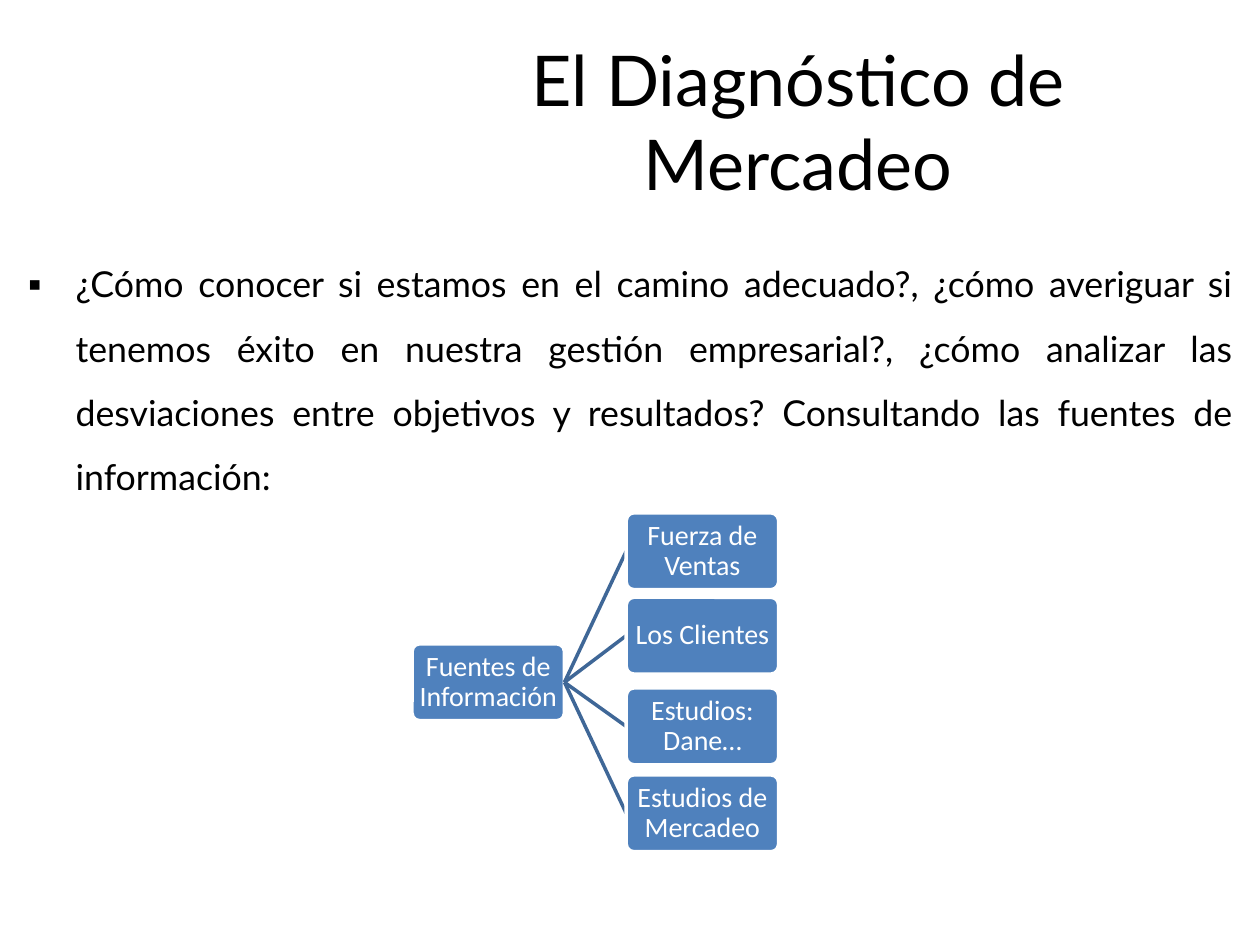
"""Build the market diagnosis slide with its tree of information sources."""
import pptx
import pptx.dml.color
import pptx.enum.shapes
import pptx.enum.text
import pptx.util
from lxml import etree
from pptx.oxml.ns import qn

Inches = pptx.util.Inches
Pt = pptx.util.Pt
PP_ALIGN = pptx.enum.text.PP_ALIGN

HEADING = "El Diagnóstico de Mercadeo"
QUESTION = (
    "¿Cómo conocer si estamos en el camino adecuado?, ¿cómo averiguar si "
    "tenemos éxito en nuestra gestión empresarial?, ¿cómo analizar las "
    "desviaciones entre objetivos y resultados? Consultando las fuentes de "
    "información:"
)
ROOT = ("Fuentes de Información", 3.27, 5.11)
SOURCES = [
    ("Fuerza de Ventas", 4.07),
    ("Los Clientes", 4.74),
    ("Estudios: Dane…", 5.46),
    ("Estudios de Mercadeo", 6.15),
]
SOURCE_LEFT = 4.97
NODE_WIDTH, NODE_HEIGHT = 1.21, 0.61
RIGHT_SIDE, LEFT_SIDE = 3, 1


def color(hex_value):
    return pptx.dml.color.RGBColor.from_string(hex_value)


def set_font(paragraph, name, size, hex_value):
    paragraph.font.name = name
    paragraph.font.size = Pt(size)
    paragraph.font.color.rgb = color(hex_value)


def fill_placeholder(placeholder, text, box, size, align):
    placeholder.left, placeholder.top, placeholder.width, placeholder.height = map(Inches, box)
    frame = placeholder.text_frame
    frame.text = text
    frame.auto_size = pptx.enum.text.MSO_AUTO_SIZE.NONE
    paragraph = frame.paragraphs[0]
    paragraph.alignment = align
    paragraph.space_before = Pt(0)
    return paragraph


def add_bullet(paragraph, char, indent):
    properties = paragraph._p.get_or_add_pPr()
    properties.set("marL", str(Inches(indent)))
    properties.set("indent", str(-Inches(indent)))
    etree.SubElement(properties, qn("a:buFont")).set("typeface", "Lato")
    etree.SubElement(properties, qn("a:buChar")).set("char", char)


def add_node(shapes, text, left, top):
    node = shapes.add_shape(
        pptx.enum.shapes.MSO_SHAPE.ROUNDED_RECTANGLE,
        Inches(left), Inches(top), Inches(NODE_WIDTH), Inches(NODE_HEIGHT),
    )
    node.adjustments[0] = 0.1
    node.shadow.inherit = False
    node.fill.solid()
    node.fill.fore_color.rgb = color("4F81BD")
    node.line.color.rgb = color("FFFFFF")
    node.line.width = Pt(2)
    frame = node.text_frame
    frame.word_wrap = True
    frame.vertical_anchor = pptx.enum.text.MSO_ANCHOR.MIDDLE
    frame.margin_left = frame.margin_right = Inches(0.01)
    frame.margin_top = frame.margin_bottom = Inches(0.01)
    frame.text = text
    label = frame.paragraphs[0]
    label.alignment = PP_ALIGN.CENTER
    label.line_spacing = 0.9
    set_font(label, "Calibri", 16, "FFFFFF")
    return node


def add_branch(shapes, root, text, top):
    branch = shapes.add_connector(pptx.enum.shapes.MSO_CONNECTOR.STRAIGHT, 0, 0, 0, 0)
    branch.line.color.rgb = color("3F6797")
    branch.line.width = Pt(2)
    etree.SubElement(branch._element.spPr, qn("a:effectLst"))
    source = add_node(shapes, text, SOURCE_LEFT, top)
    branch.begin_connect(root, RIGHT_SIDE)
    branch.end_connect(source, LEFT_SIDE)


def main():
    deck = pptx.Presentation()
    deck.slide_width, deck.slide_height = Inches(10), Inches(7.5)
    slide = deck.slides.add_slide(deck.slide_layouts[1])

    heading = fill_placeholder(
        slide.shapes.title, HEADING, (3.18, 0.13, 6.31, 1.65), 40, PP_ALIGN.CENTER)
    set_font(heading, "Lato", 40, "000000")

    question = fill_placeholder(
        slide.placeholders[1], QUESTION, (0.12, 1.86, 9.76, 2.13), 20.4, PP_ALIGN.JUSTIFY)
    question.line_spacing = 1.5
    add_bullet(question, "▪", 0.38)
    set_font(question, "Lato", 20.4, "000000")

    root = add_node(slide.shapes, *ROOT)
    for text, top in SOURCES:
        add_branch(slide.shapes, root, text, top)

    deck.save("out.pptx")


if __name__ == "__main__":
    main()
